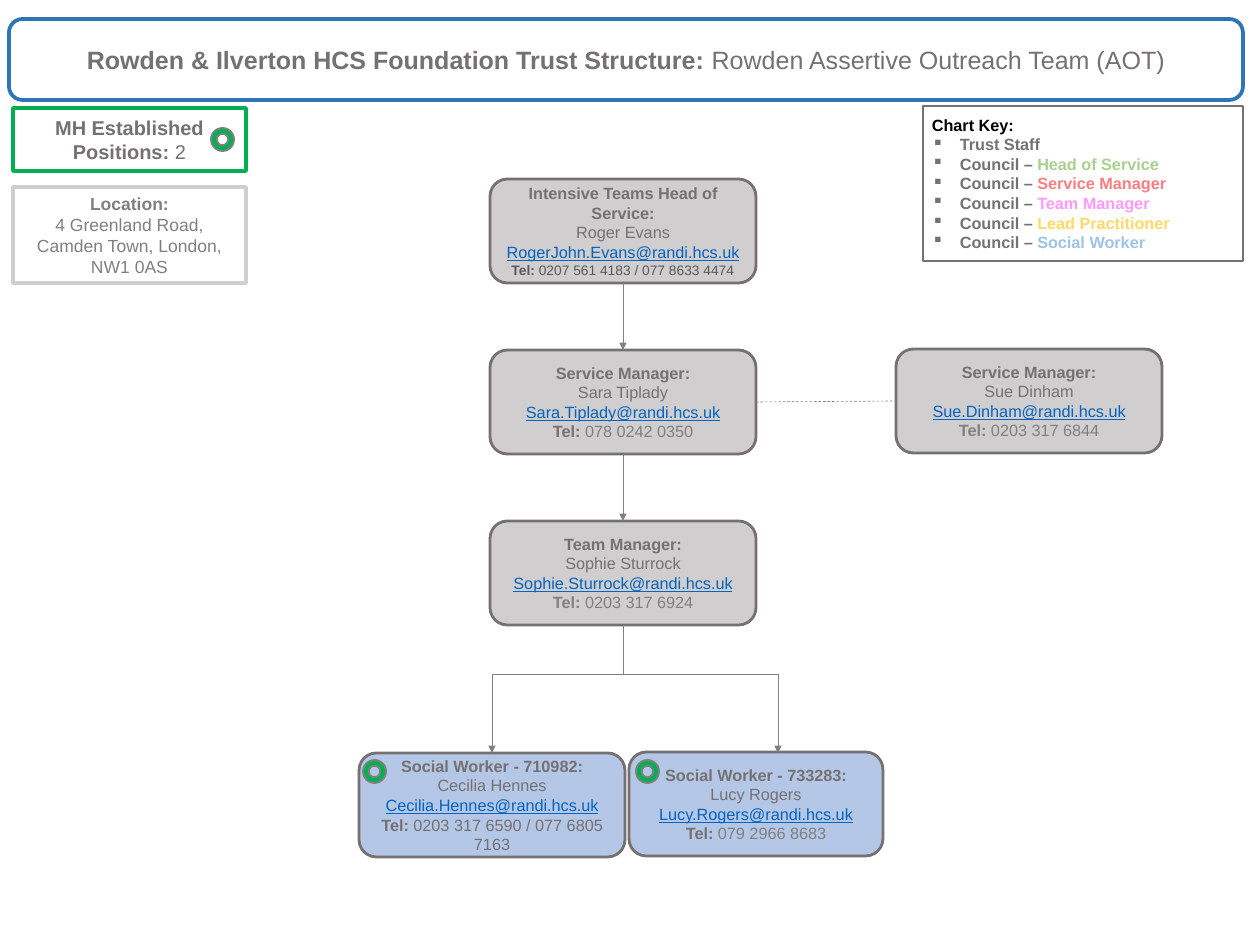
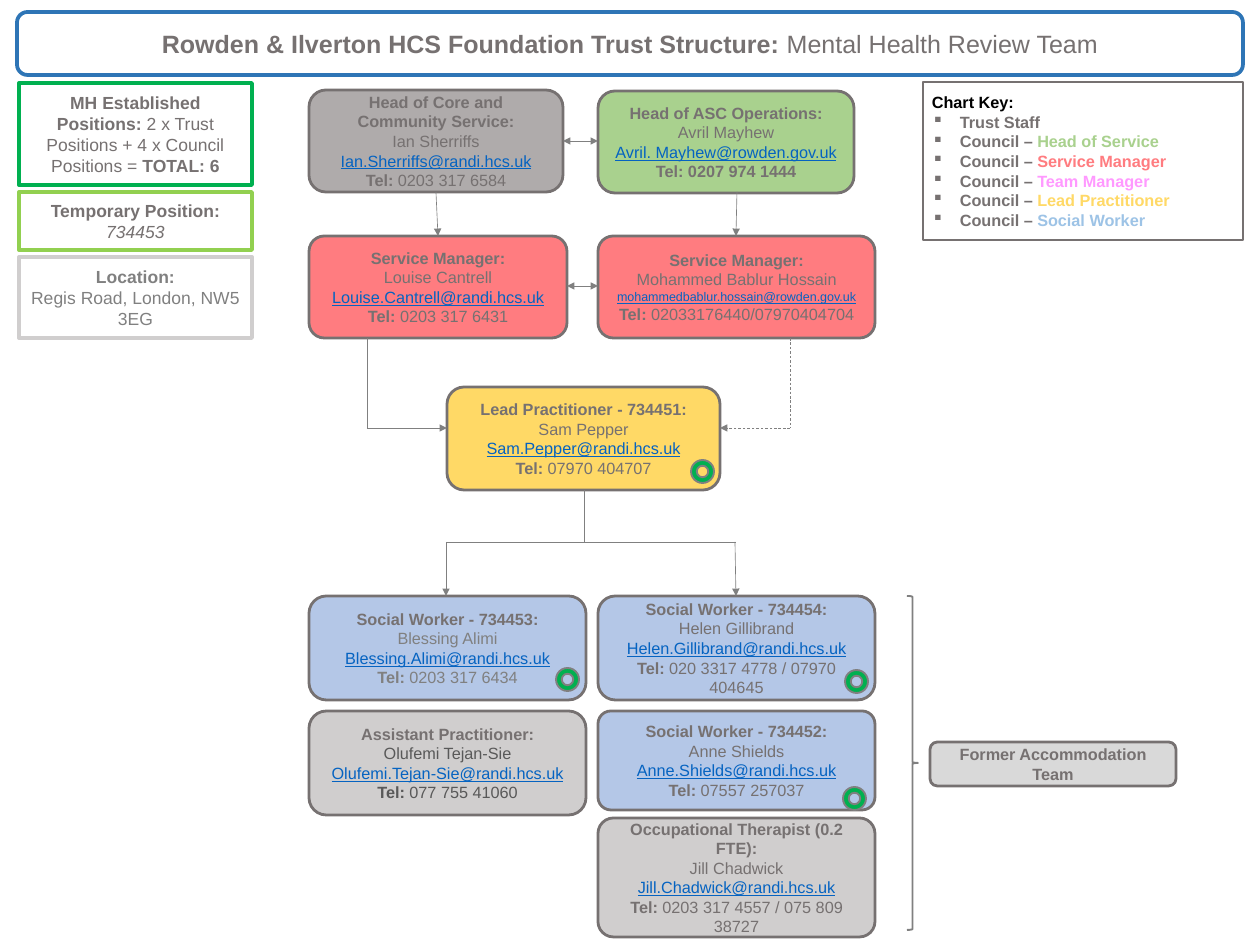
from lxml.etree import SubElement
from pptx import Presentation
from pptx.dml.color import RGBColor
from pptx.enum.dml import MSO_LINE
from pptx.enum.shapes import MSO_CONNECTOR as CONNECTOR, MSO_SHAPE as SHAPE
from pptx.enum.text import MSO_ANCHOR as ANCHOR, PP_ALIGN as ALIGN
from pptx.oxml.ns import qn
from pptx.util import Pt

PX = 10160
COLORS = {
    "white": "FFFFFF", "black": "000000", "blue": "2E75B6", "link": "0563C1",
    "text": "767171", "mid": "808080", "dark": "595959",
    "trust": "D0CECE", "trust_head": "AFABAB", "former": "D9D9D9",
    "head": "A9D18E", "service": "FF7C80", "team": "FF99FF", "lead": "FFD966",
    "worker": "B4C7E7", "worker_key": "9DC3E6",
    "established": "00B050", "temporary": "92D050",
}
BOLD = {"bold": True}
MID = {"color": "mid"}
DARK = {"color": "dark"}
CARD_HEIGHT = 104
DONUT_SIZE = 23
KEY_INDENT = 28
TRUST_NAME = "Rowden & Ilverton HCS Foundation Trust Structure: "
KEY_ROLES = [
    ("Head of Service", "head"), ("Service Manager", "service"),
    ("Team Manager", "team"), ("Lead Practitioner", "lead"),
    ("Social Worker", "worker_key"),
]


def add_box(slide, kind, frame, fill, outline, width, paragraphs=(), size=13, corner=None):
    shape = slide.shapes.add_shape(kind, *[value * PX for value in frame])
    shape.shadow.inherit = False
    if fill:
        shape.fill.solid()
        shape.fill.fore_color.rgb = RGBColor.from_string(COLORS[fill])
    else:
        shape.fill.background()
    shape.line.color.rgb = RGBColor.from_string(COLORS[outline])
    shape.line.width = Pt(width)
    if corner:
        shape.adjustments[0] = corner
    text_frame = shape.text_frame
    text_frame.word_wrap = True
    text_frame.vertical_anchor = ANCHOR.MIDDLE
    for index, runs in enumerate(paragraphs):
        paragraph = text_frame.add_paragraph() if index else text_frame.paragraphs[0]
        paragraph.alignment = ALIGN.CENTER
        for text, changes in runs:
            run = paragraph.add_run()
            run.text = text
            style = {"name": "Arial", "size": size, "bold": False, "color": "text"} | changes
            run.font.color.rgb = RGBColor.from_string(COLORS[style.pop("color")])
            style["size"] = Pt(style["size"])
            for attribute, value in style.items():
                setattr(run.font, attribute, value)
    return shape


def add_line(slide, points, ends="", dashed=False):
    line = slide.shapes.add_connector(CONNECTOR.STRAIGHT, *[value * PX for value in points])
    line.line.color.rgb = RGBColor.from_string(COLORS["mid"])
    line.line.width = Pt(0.5)
    if dashed:
        line.line.dash_style = MSO_LINE.DASH
    for end in ends.split():
        SubElement(line.line._ln, qn(f"a:{end}End"), type="triangle")
    SubElement(line._element.spPr, qn("a:effectLst"))


outreach = {
    "team": "Rowden Assertive Outreach Team (AOT)",
    "title_frame": (9, 19, 1234, 81),
    "key_frame": (923, 106, 320, 155),
    "notices": [
        ((13, 108, 233, 63), "established", 16,
         [[("MH Established Positions: ", BOLD), ("2", {})]]),
        ((13, 187, 233, 96), "trust", 14,
         [[("Location:", MID | BOLD)],
          [("4 Greenland Road, Camden Town, London, NW1 0AS", MID)]]),
    ],
    "cards": [
        ((490, 179, 266, CARD_HEIGHT), "trust", "Intensive Teams Head of Service:", "Roger Evans",
         "RogerJohn.Evans@randi.hcs.uk", "0207 561 4183 / 077 8633 4474",
         {"label": DARK | {"size": 11}, "number": DARK | {"size": 11}}),
        ((490, 350, 266, CARD_HEIGHT), "trust", "Service Manager:", "Sara Tiplady",
         "Sara.Tiplady@randi.hcs.uk", "078 0242 0350", {"number": MID}),
        ((490, 521, 266, CARD_HEIGHT), "trust", "Team Manager:", "Sophie Sturrock",
         "Sophie.Sturrock@randi.hcs.uk", "0203 317 6924", {"label": MID, "number": MID}),
        ((359, 753, 266, CARD_HEIGHT), "worker", "Social Worker - 710982:", "Cecilia Hennes",
         "Cecilia.Hennes@randi.hcs.uk", "0203 317 6590 / 077 6805 7163", {}),
        ((629, 752, 254, CARD_HEIGHT), "worker", "Social Worker - 733283:", "Lucy Rogers",
         "Lucy.Rogers@randi.hcs.uk", "079 2966 8683", {"number": MID}),
        ((896, 349, 266, CARD_HEIGHT), "trust", "Service Manager:", "Sue Dinham",
         "Sue.Dinham@randi.hcs.uk", "0203 317 6844", {"label": MID, "number": MID}),
    ],
    "lines": [
        ((623, 283, 623, 350), "tail"), ((623, 454, 623, 521), "tail"),
        ((623, 625, 623, 674),), ((492, 674, 778, 674),),
        ((492, 674, 492, 753), "tail"), ((778, 674, 778, 753), "tail"),
        ((756, 402, 896, 401), "", True),
    ],
    "donuts": [(363, 760), (636, 760), (211, 128)],
}

review = {
    "team": "Mental Health Review Team",
    "title_frame": (17, 12, 1226, 63),
    "key_frame": (923, 82, 320, 158),
    "notices": [
        ((19, 83, 233, 102), "established", 14,
         [[("MH Established Positions: ", BOLD),
           ("2 x Trust Positions + 4 x Council Positions = ", {}), ("TOTAL: 6", BOLD)]]),
        ((19, 192, 233, 58), "temporary", 14,
         [[("Temporary Position: ", BOLD), ("734453", {"italic": True})]]),
        ((19, 257, 233, 81), "trust", 14,
         [[("Location:", MID | BOLD)], [("Regis Road, London, NW5 3EG", MID)]]),
    ],
    "cards": [
        ((309, 90, 254, 102), "trust_head", "Head of Core and Community Service:", "Ian Sherriffs",
         "Ian.Sherriffs@randi.hcs.uk", "0203 317 6584", {}),
        ((598, 91, 256, 102), "head", "Head of ASC Operations:", "Avril Mayhew",
         "Avril. Mayhew@rowden.gov.uk", "0207 974 1444", {"number": BOLD}),
        ((309, 236, 258, 102), "service", "Service Manager:", "Louise Cantrell",
         "Louise.Cantrell@randi.hcs.uk", "0203 317 6431", {"corner": 0.15}),
        ((598, 236, 277, 102), "service", "Service Manager:", "Mohammed Bablur Hossain",
         "mohammedbablur.hossain@rowden.gov.uk", "02033176440/07970404704",
         {"corner": 0.15, "email": {"size": 10}}),
        ((447, 387, 273, 103), "lead", "Lead Practitioner - 734451:", "Sam Pepper",
         "Sam.Pepper@randi.hcs.uk", "07970 404707", {}),
        ((309, 596, 277, CARD_HEIGHT), "worker", "Social Worker - 734453:", "Blessing Alimi",
         "Blessing.Alimi@randi.hcs.uk", "0203 317 6434",
         {"name": MID, "label": MID, "number": MID}),
        ((598, 596, 277, CARD_HEIGHT), "worker", "Social Worker - 734454:", "Helen Gillibrand",
         "Helen.Gillibrand@randi.hcs.uk", "020 3317 4778 / 07970 404645", {}),
        ((309, 711, 277, CARD_HEIGHT), "trust", "Assistant Practitioner:", "Olufemi Tejan-Sie",
         "Olufemi.Tejan-Sie@randi.hcs.uk", "077 755 41060",
         {"name": DARK, "label": DARK, "number": DARK}),
        ((598, 711, 277, 99), "worker", "Social Worker - 734452:", "Anne Shields",
         "Anne.Shields@randi.hcs.uk", "07557 257037", {"corner": 0.13}),
        ((598, 818, 277, 119), "trust", "Occupational Therapist (0.2 FTE):", "Jill Chadwick",
         "Jill.Chadwick@randi.hcs.uk", "0203 317 4557 / 075 809 38727", {"corner": 0.13}),
    ],
    "lines": [
        ((737, 192, 736, 236), "tail"), ((436, 192, 438, 236), "tail"),
        ((790, 338, 790, 428), "", True), ((790, 428, 720, 428), "tail", True),
        ((367, 338, 367, 428),), ((367, 428, 447, 428), "tail"),
        ((584, 490, 584, 542),), ((446, 542, 736, 542),),
        ((446, 542, 446, 596), "tail"), ((735, 542, 736, 596), "tail"),
        ((563, 141, 598, 141), "head tail"), ((567, 286, 598, 286), "head tail"),
    ],
    "donuts": [(691, 460), (556, 668), (845, 670), (843, 787)],
}

presentation = Presentation()
presentation.slide_width = 1260 * PX
presentation.slide_height = 945 * PX

for content in (outreach, review):
    slide = presentation.slides.add_slide(presentation.slide_layouts[6])
    add_box(slide, SHAPE.ROUNDED_RECTANGLE, content["title_frame"], "white", "blue", 3,
            [[(TRUST_NAME, BOLD), (content["team"], {})]], size=20)

    key_rows = [[("Chart Key:", BOLD | {"color": "black"})], [("Trust Staff", BOLD)]]
    key_rows += [[("Council – ", BOLD), (role, BOLD | {"color": color})]
                 for role, color in KEY_ROLES]
    key = add_box(slide, SHAPE.RECTANGLE, content["key_frame"], "white", "text", 2.25, key_rows)
    for index, paragraph in enumerate(key.text_frame.paragraphs):
        paragraph.alignment = ALIGN.LEFT
        if index:
            properties = paragraph._p.get_or_add_pPr()
            properties.set("marL", str(KEY_INDENT * PX))
            properties.set("indent", str(-KEY_INDENT * PX))
            SubElement(properties, qn("a:buChar"), char="▪")

    for frame, outline, size, paragraphs in content["notices"]:
        add_box(slide, SHAPE.RECTANGLE, frame, "white", outline, 3, paragraphs, size)

    for frame, fill, role, name, email, number, options in content["cards"]:
        link = {"color": "link", "underline": True} | options.get("email", {})
        paragraphs = [
            [(role, BOLD)],
            [(name, options.get("name", {}))],
            [(email, link)],
            [("Tel: ", BOLD | options.get("label", {})), (number, options.get("number", {}))],
        ]
        add_box(slide, SHAPE.ROUNDED_RECTANGLE, frame, fill, "text", 2.25, paragraphs,
                corner=options.get("corner"))

    for line in content["lines"]:
        add_line(slide, *line)

    for left, top in content["donuts"]:
        add_box(slide, SHAPE.DONUT, (left, top, DONUT_SIZE, DONUT_SIZE),
                "established", "mid", 1.5, corner=0.25)

add_box(slide, SHAPE.RIGHT_BRACE, (907, 596, 11, 334), None, "mid", 1.5)
add_box(slide, SHAPE.ROUNDED_RECTANGLE, (930, 742, 246, 44), "former", "text", 2.25,
        [[("Former Accommodation Team", BOLD)]])

presentation.save("out.pptx")
